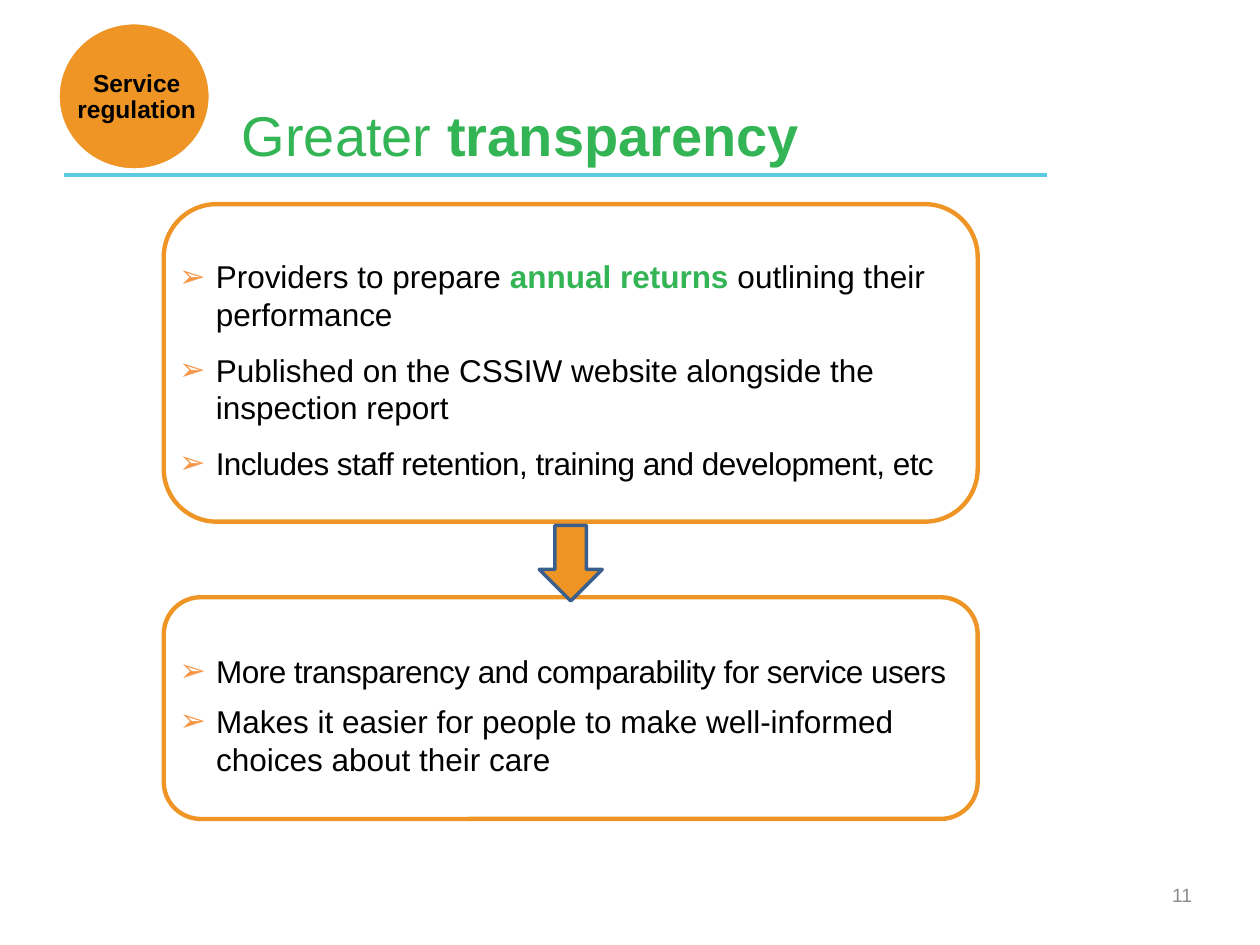
from lxml.etree import SubElement
from pptx import Presentation
from pptx.dml.color import RGBColor
from pptx.enum.shapes import MSO_CONNECTOR, MSO_SHAPE
from pptx.enum.text import MSO_ANCHOR as ANCHOR, PP_ALIGN as ALIGN
from pptx.oxml.ns import qn
from pptx.util import Inches, Pt

ORANGE = RGBColor(0xEF, 0x95, 0x26)
BULLET = "F79646"
GREEN = RGBColor(0x34, 0xB5, 0x55)
SKY = RGBColor(0x5C, 0xC9, 0xE3)
NAVY = RGBColor(0x3A, 0x5F, 0x8C)
GREY = RGBColor(0x8C, 0x8C, 0x8C)
BLACK = RGBColor(0, 0, 0)
WHITE = RGBColor(0xFF, 0xFF, 0xFF)

# Grid of 100 columns by 75 rows
COLS, ROWS = 100, 75
CELL = Inches(10) // COLS
PANEL_LEFT, PANEL_WIDTH = 13, 64.6
INDENT = Inches(0.29)


def cells(*counts):
    return [round(n * CELL) for n in counts]


def add_shape(shapes, kind, box, fill, line, weight):
    sp = shapes.add_shape(kind, *cells(*box))
    sp.shadow.inherit = False
    if fill is None:
        sp.fill.background()
    else:
        sp.fill.solid()
        sp.fill.fore_color.rgb = fill
    sp.line.color.rgb = line
    sp.line.width = Pt(weight)
    return sp


def set_frame(tf, anchor, insets):
    tf.word_wrap = True
    tf.vertical_anchor = anchor
    (tf.margin_left, tf.margin_top,
     tf.margin_right, tf.margin_bottom) = cells(*insets)


def add_run(p, text, size, color, bold=False, spacing=0):
    r = p.add_run()
    r.text = text
    r.font.name = "Arial"
    r.font.size = Pt(size)
    r.font.color.rgb = color
    r.font.bold = bold
    if spacing:
        r._r.get_or_add_rPr().set("spc", str(round(spacing * 100)))


def add_text(shapes, box, runs, size, align=ALIGN.LEFT, anchor=ANCHOR.MIDDLE,
             insets=(1, 0.5, 1, 0.5)):
    tf = shapes.add_textbox(*cells(*box)).text_frame
    set_frame(tf, anchor, insets)
    p = tf.paragraphs[0]
    p.alignment = align
    for text, color, bold in runs:
        add_run(p, text, size, color, bold)
    return p


def add_bullet(p):
    pPr = p._p.get_or_add_pPr()
    pPr.set("marL", str(INDENT))
    pPr.set("indent", str(-INDENT))
    color = SubElement(pPr, qn("a:buClr"))
    SubElement(color, qn("a:srgbClr")).set("val", BULLET)
    SubElement(pPr, qn("a:buFont")).set("typeface", "Arial")
    SubElement(pPr, qn("a:buChar")).set("char", "➢")


def add_panel(s, top, height, insets, gap, items):
    """Rounded outline with bullets; each item is (runs, letter spacing)."""
    box = PANEL_LEFT, top, PANEL_WIDTH, height
    sp = add_shape(s.shapes, MSO_SHAPE.ROUNDED_RECTANGLE, box, None, ORANGE, 2.5)
    tf = sp.text_frame
    set_frame(tf, ANCHOR.TOP, insets)
    for i, (runs, spacing) in enumerate(items):
        p = tf.add_paragraph() if i else tf.paragraphs[0]
        add_bullet(p)
        p.alignment = ALIGN.LEFT
        p.space_before = Pt(4 if i else 0)
        p.space_after = Pt(gap)
        for text, color, bold in runs:
            add_run(p, text, 18, color, bold, spacing)


def add_rule(s, left, right, y):
    x1, x2, y = cells(left, right, y)
    line = s.shapes.add_connector(MSO_CONNECTOR.STRAIGHT, x1, y, x2, y)
    line.line.color.rgb = SKY
    line.line.width = Pt(2)
    SubElement(line._element.spPr, qn("a:effectLst"))


def add_badge(s, text):
    shapes = s.shapes.add_group_shape().shapes
    add_shape(shapes, MSO_SHAPE.OVAL, (4.6, 1.8, 12.1, 11.7), ORANGE, WHITE, 2)
    p = add_text(shapes, (4.8, 1.9, 12.1, 11.7), [(text, BLACK, True)], 14,
                 ALIGN.CENTER, insets=(0.2,) * 4)
    p.line_spacing = 0.9


def main():
    prs = Presentation()
    prs.slide_width, prs.slide_height = cells(COLS, ROWS)
    s = prs.slides.add_slide(prs.slide_layouts[6])

    # Heading
    add_rule(s, 5.1, 83.1, 13.9)
    add_badge(s, "Service regulation")
    add_text(s.shapes, (18.2, 2.9, 61.4, 10.9),
             [("Greater ", GREEN, False), ("transparency", GREEN, True)],
             32, anchor=ANCHOR.BOTTOM)

    # What providers do
    add_panel(s, 16.2, 25.2, (0, 3, 0.4, 0.5), 6, [
        ([("Providers to prepare ", BLACK, False),
          ("annual returns ", GREEN, True),
          ("outlining their performance", BLACK, False)], 0),
        ([("Published on the CSSIW website alongside the inspection report",
           BLACK, False)], 0),
        ([("Includes staff retention, training and development, etc",
           BLACK, False)], -0.3),
    ])

    # What people gain
    add_panel(s, 47.4, 17.6, (0.4, 3.5, 1, 0.5), 3, [
        ([("More transparency and comparability for service users",
           BLACK, False)], -0.3),
        ([("Makes it easier for people to make well-informed choices "
           "about their care", BLACK, False)], 0),
    ])

    # Arrow centred between the panels
    width = 5
    left = PANEL_LEFT + (PANEL_WIDTH - width) / 2
    add_shape(s.shapes, MSO_SHAPE.DOWN_ARROW, (left, 41.7, width, 6),
              ORANGE, NAVY, 2)

    # Page number
    add_text(s.shapes, (72.3, 69, 23.3, 4), [("11", GREY, False)], 11,
             ALIGN.RIGHT)

    prs.save("out.pptx")


if __name__ == "__main__":
    main()
